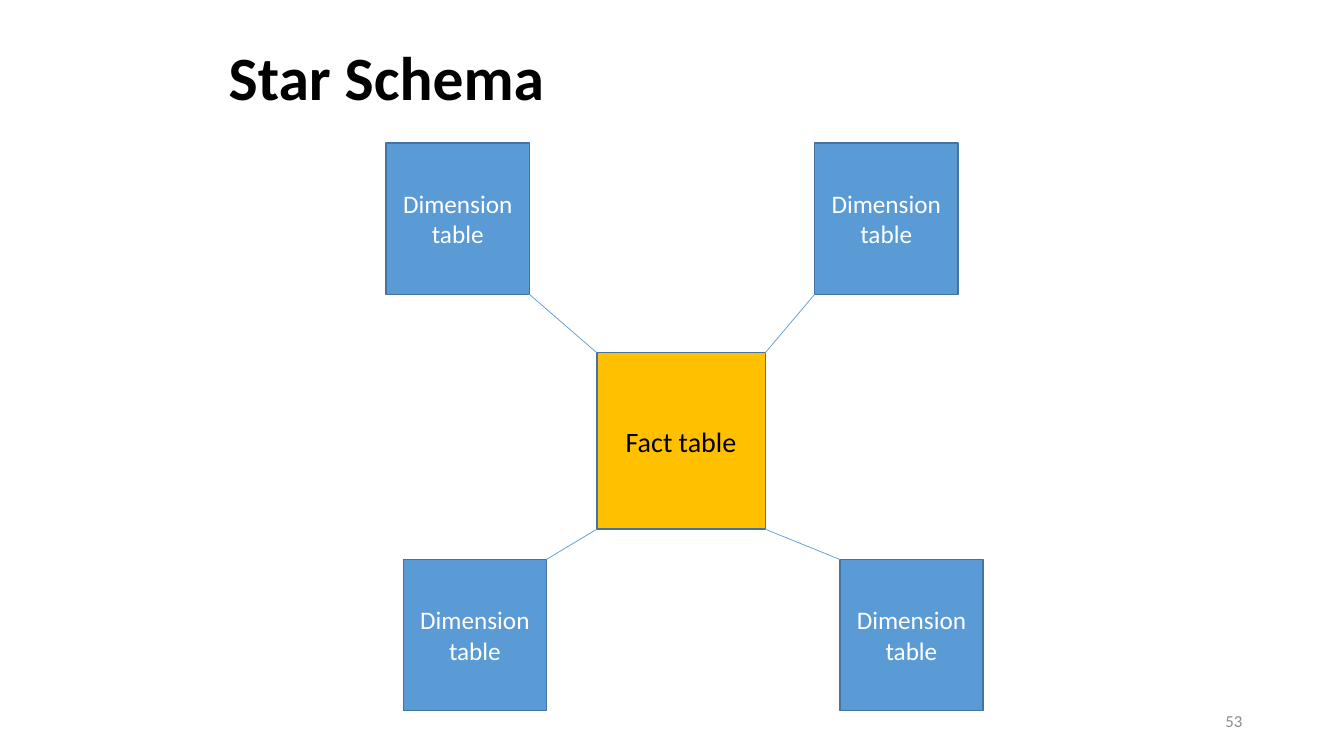
from dataclasses import dataclass

from pptx import Presentation
from pptx.dml.color import RGBColor
from pptx.enum.shapes import MSO_CONNECTOR as Connector, MSO_SHAPE as Shape
from pptx.enum.text import MSO_ANCHOR as Anchor, PP_ALIGN as Align
from pptx.oxml.ns import qn
from pptx.slide import Slide
from pptx.text.text import TextFrame
from pptx.util import Inches, Pt
from lxml.etree import SubElement


@dataclass(frozen=True)
class Theme:
    font: str = "Calibri"
    black: RGBColor = RGBColor(0x00, 0x00, 0x00)
    white: RGBColor = RGBColor(0xFF, 0xFF, 0xFF)
    gray: RGBColor = RGBColor(0x8C, 0x8C, 0x8C)
    gold: RGBColor = RGBColor(0xFF, 0xC0, 0x00)
    blue: RGBColor = RGBColor(0x5B, 0x9B, 0xD5)
    outline: RGBColor = RGBColor(0x43, 0x73, 0x9E)
    title_size: int = 44
    fact_size: int = 20
    dimension_size: int = 18
    number_size: int = 12
    outline_width: float = 1
    link_width: float = 0.5


THEME = Theme()


@dataclass(frozen=True)
class Box:
    left: float
    top: float
    width: float
    height: float

    @property
    def right(self) -> float:
        return self.left + self.width

    @property
    def bottom(self) -> float:
        return self.top + self.height

    def lengths(self) -> tuple[Inches, Inches, Inches, Inches]:
        return Inches(self.left), Inches(self.top), Inches(self.width), Inches(self.height)


@dataclass(frozen=True)
class Table:
    label: str
    box: Box
    fill: RGBColor
    text_color: RGBColor
    text_size: int


def dimension(left: float, top: float) -> Table:
    return Table("Dimension table", Box(left, top, 1.42, 1.5),
                 THEME.blue, THEME.white, THEME.dimension_size)


FACT = Table("Fact table", Box(5.92, 3.5, 1.67, 1.75),
             THEME.gold, THEME.black, THEME.fact_size)
TOP_ROW, BOTTOM_ROW = 1.42, 5.55
DIMENSIONS = [
    dimension(3.83, TOP_ROW),
    dimension(4, BOTTOM_ROW),
    dimension(8.33, BOTTOM_ROW),
    dimension(8.08, TOP_ROW),
]


def write(frame: TextFrame, text: str, size: int, color: RGBColor,
          align: Align, bold: bool = False, line_spacing: float = 1.0) -> None:
    frame.word_wrap = True
    frame.vertical_anchor = Anchor.MIDDLE
    paragraph = frame.paragraphs[0]
    paragraph.text = text
    paragraph.alignment = align
    paragraph.line_spacing = line_spacing
    paragraph.font.name = THEME.font
    paragraph.font.size = Pt(size)
    paragraph.font.bold = bold
    paragraph.font.color.rgb = color


def draw_table(slide: Slide, table: Table) -> None:
    shape = slide.shapes.add_shape(Shape.RECTANGLE, *table.box.lengths())
    shape.shadow.inherit = False
    shape.fill.solid()
    shape.fill.fore_color.rgb = table.fill
    shape.line.color.rgb = THEME.outline
    shape.line.width = Pt(THEME.outline_width)
    write(shape.text_frame, table.label, table.text_size, table.text_color, Align.CENTER)


def draw_link(slide: Slide, fact: Box, other: Box) -> None:
    """Join the facing corners of the two boxes."""
    x_pair = (fact.left, other.right) if other.left < fact.left else (fact.right, other.left)
    y_pair = (fact.top, other.bottom) if other.top < fact.top else (fact.bottom, other.top)
    link = slide.shapes.add_connector(
        Connector.STRAIGHT, Inches(x_pair[0]), Inches(y_pair[0]),
        Inches(x_pair[1]), Inches(y_pair[1]))
    link.line.color.rgb = THEME.blue
    link.line.width = Pt(THEME.link_width)
    SubElement(link._element.spPr, qn("a:effectLst"))


def main() -> None:
    presentation = Presentation()
    presentation.slide_width = Inches(13.33)
    presentation.slide_height = Inches(7.5)
    slide = presentation.slides.add_slide(presentation.slide_layouts[6])

    # Title
    title = slide.shapes.add_textbox(*Box(2.17, 0.17, 9, 1.25).lengths())
    write(title.text_frame, "Star Schema", THEME.title_size, THEME.black,
          Align.LEFT, bold=True, line_spacing=0.9)

    # Fact table and its dimensions
    for table in [FACT, *DIMENSIONS]:
        draw_table(slide, table)

    # Links from the fact table
    for table in DIMENSIONS:
        draw_link(slide, FACT.box, table.box)

    # Slide number
    number = slide.shapes.add_textbox(*Box(9.42, 6.95, 3, 0.4).lengths())
    write(number.text_frame, "53", THEME.number_size, THEME.gray, Align.RIGHT)

    presentation.save("out.pptx")


if __name__ == "__main__":
    main()
